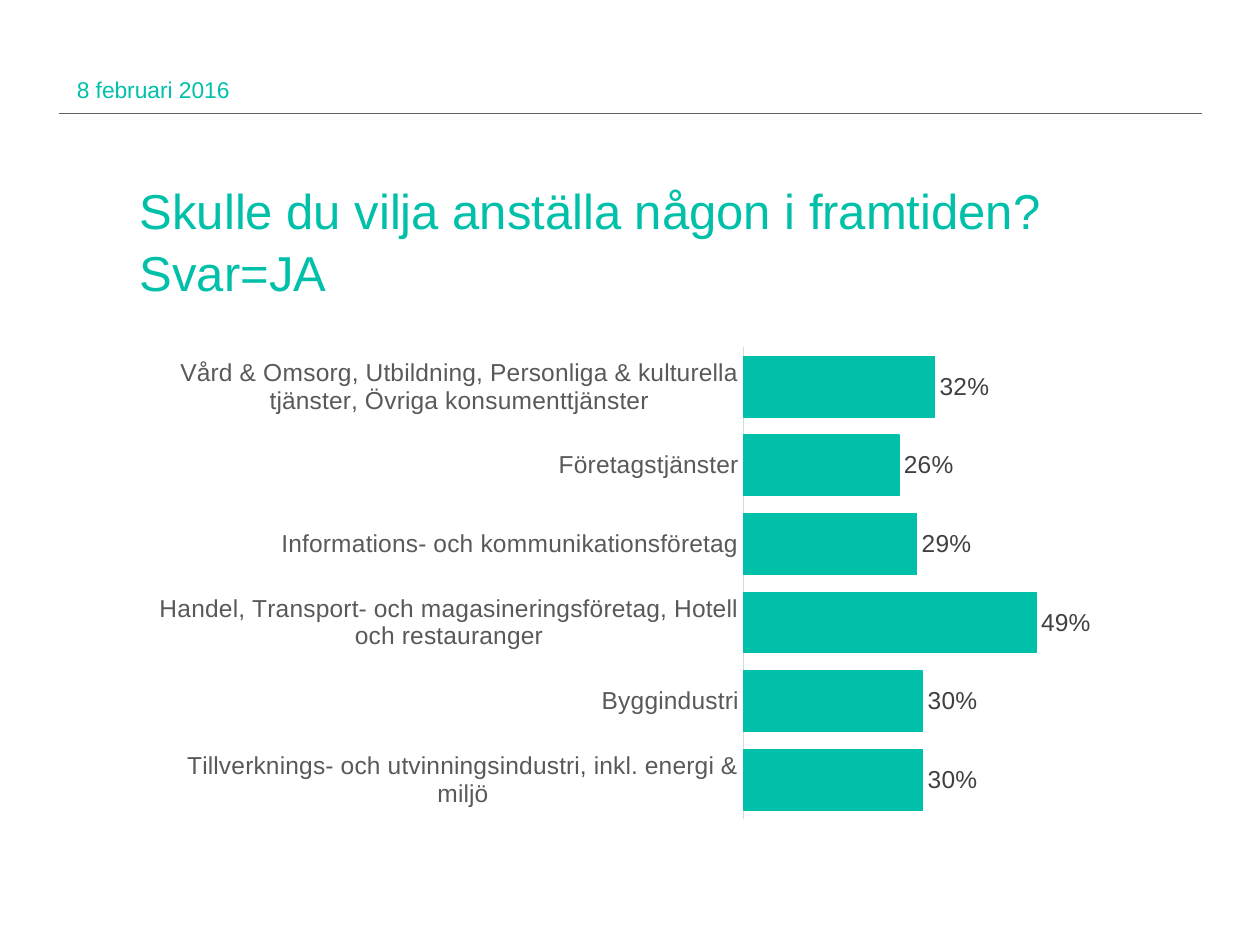
from dataclasses import dataclass

from lxml import etree
from pptx import Presentation
from pptx.chart.data import CategoryChartData
from pptx.dml.color import RGBColor
from pptx.enum import chart as chart_enum, shapes, text
from pptx.oxml.ns import qn
from pptx.util import Inches, Pt

TEAL = RGBColor(0x00, 0xC0, 0xA9)
RULE_GRAY = RGBColor(0x60, 0x60, 0x60)
AXIS_GRAY = RGBColor(0xD9, 0xD9, 0xD9)
CATEGORY_GRAY = RGBColor(0x59, 0x59, 0x59)
VALUE_GRAY = RGBColor(0x40, 0x40, 0x40)
BLACK = RGBColor(0, 0, 0)
FONT = "Arial"

CONTENT_LEFT, CONTENT_WIDTH = 1.11, 7.79

ANSWERS = {
    "Tillverknings- och utvinningsindustri, inkl. energi & miljö": 0.30,
    "Byggindustri": 0.30,
    "Handel, Transport- och magasineringsföretag, Hotell och restauranger": 0.49,
    "Informations- och kommunikationsföretag": 0.29,
    "Företagstjänster": 0.26,
    "Vård & Omsorg, Utbildning, Personliga & kulturella tjänster, "
    "Övriga konsumenttjänster": 0.32,
}


@dataclass(frozen=True)
class Label:
    words: str
    left: float
    top: float
    width: float
    height: float
    size: int
    anchor: text.MSO_ANCHOR
    line_spacing: float = 1.0


LABELS = (
    Label("Skulle du vilja anställa någon i framtiden? Svar=JA",
          CONTENT_LEFT, 1.41, CONTENT_WIDTH, 0.96, 28, text.MSO_ANCHOR.TOP, 1.05),
    Label("8 februari 2016", 0.61, 0.51, 2.33, 0.4, 13, text.MSO_ANCHOR.MIDDLE),
)


def set_attributes(target, values: dict) -> None:
    for name, value in values.items():
        setattr(target, name, value)


def set_font(font, size: int, color: RGBColor) -> None:
    set_attributes(font, {"name": FONT, "size": Pt(size), "bold": False})
    font.color.rgb = color


def set_line(line, color: RGBColor, width: float) -> None:
    line.color.rgb = color
    line.width = Pt(width)


def add_label(slide, label: Label) -> None:
    shape = slide.shapes.add_textbox(Inches(label.left), Inches(label.top),
                                     Inches(label.width), Inches(label.height))
    frame = shape.text_frame
    set_attributes(frame, {
        "margin_left": 0, "margin_right": 0, "margin_top": 0, "margin_bottom": 0,
        "word_wrap": True, "vertical_anchor": label.anchor,
    })
    paragraph = frame.paragraphs[0]
    paragraph.line_spacing = label.line_spacing
    run = paragraph.add_run()
    run.text = label.words
    set_font(run.font, label.size, TEAL)


def add_header_rule(slide) -> None:
    rule = slide.shapes.add_connector(shapes.MSO_CONNECTOR.STRAIGHT,
                                      Inches(0.47), Inches(0.9), Inches(9.54), Inches(0.9))
    set_line(rule.line, RULE_GRAY, 0.5)
    etree.SubElement(rule._element.spPr, qn("a:effectLst"))


def add_answer_chart(slide) -> None:
    data = CategoryChartData(number_format="0%")
    data.categories = list(ANSWERS)
    data.add_series("Series 1", list(ANSWERS.values()))
    chart = slide.shapes.add_chart(
        chart_enum.XL_CHART_TYPE.BAR_CLUSTERED, Inches(CONTENT_LEFT), Inches(2.68),
        Inches(CONTENT_WIDTH), Inches(3.9), data).chart
    set_attributes(chart, {"has_legend": False, "has_title": False})
    set_font(chart.font, 10, BLACK)

    category_axis = chart.category_axis
    set_attributes(category_axis, {
        "major_tick_mark": chart_enum.XL_TICK_MARK.NONE,
        "minor_tick_mark": chart_enum.XL_TICK_MARK.NONE,
        "has_major_gridlines": False,
    })
    set_font(category_axis.tick_labels.font, 14, CATEGORY_GRAY)
    set_line(category_axis.format.line, AXIS_GRAY, 0.75)
    set_attributes(chart.value_axis, {
        "visible": False, "has_major_gridlines": False, "minimum_scale": 0,
        "maximum_scale": 0.6,
    })

    plot = chart.plots[0]
    set_attributes(plot, {"gap_width": 30, "vary_by_categories": False,
                          "has_data_labels": True})
    set_attributes(plot.data_labels, {
        "show_value": True, "number_format": "0%", "number_format_is_linked": False,
        "position": chart_enum.XL_LABEL_POSITION.OUTSIDE_END,
    })
    set_font(plot.data_labels.font, 14, VALUE_GRAY)
    bars = plot.series[0].format
    bars.fill.solid()
    bars.fill.fore_color.rgb = TEAL
    set_line(bars.line, TEAL, 0.75)


def main() -> None:
    presentation = Presentation()
    set_attributes(presentation, {"slide_width": Inches(10), "slide_height": Inches(7.5)})
    slide = presentation.slides.add_slide(presentation.slide_layouts[6])
    add_header_rule(slide)
    for label in LABELS:
        add_label(slide, label)
    add_answer_chart(slide)
    presentation.save("out.pptx")


if __name__ == "__main__":
    main()
